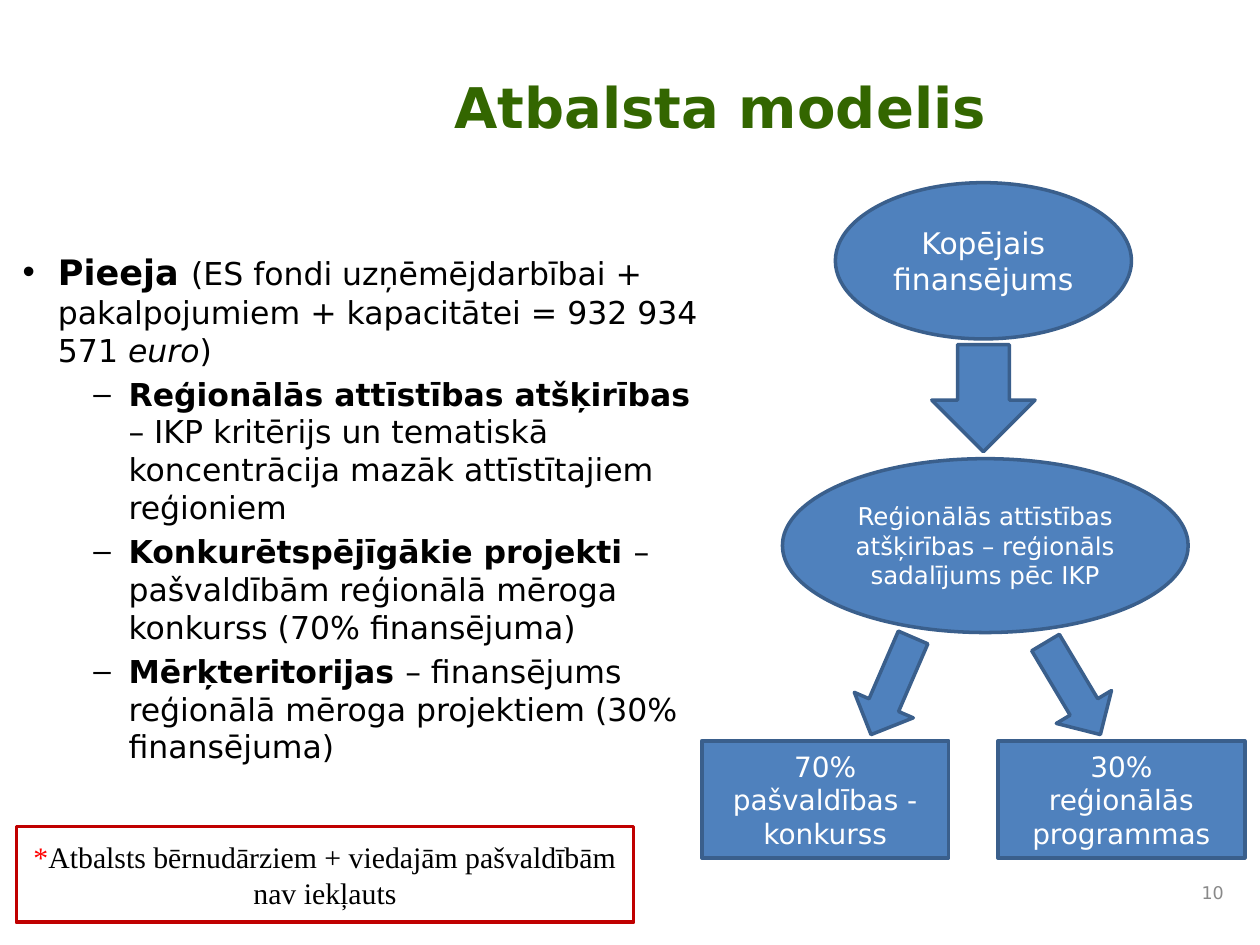
from pptx import Presentation
from pptx.dml.color import RGBColor
from pptx.enum.shapes import MSO_SHAPE
from pptx.enum.text import MSO_ANCHOR, MSO_AUTO_SIZE, PP_ALIGN
from pptx.util import Inches, Pt

BLUE = RGBColor(0x4F, 0x81, 0xBD)
DARK_BLUE = RGBColor(0x3A, 0x5F, 0x8C)
GREEN = RGBColor(0x33, 0x66, 0x00)
DARK_RED = RGBColor(0xC0, 0x00, 0x00)
RED = RGBColor(0xFF, 0x00, 0x00)
GREY = RGBColor(0x89, 0x89, 0x89)
BLACK = RGBColor(0, 0, 0)
WHITE = RGBColor(0xFF, 0xFF, 0xFF)
SANS = "DejaVu Sans"
SERIF = "Times New Roman"

SUBPOINTS = [
    ("Reģionālās attīstības atšķirības ",
     "– IKP kritērijs un tematiskā koncentrācija mazāk attīstītajiem reģioniem"),
    ("Konkurētspējīgākie projekti ",
     "– pašvaldībām reģionālā mēroga konkurss (70% finansējuma)"),
    ("Mērķteritorijas ",
     "– finansējums reģionālā mēroga projektiem (30% finansējuma)"),
]


def place(shape, left, top, width, height):
    shape.left, shape.top = Inches(left), Inches(top)
    shape.width, shape.height = Inches(width), Inches(height)


def style_font(font, size, color, name=SANS):
    font.name = name
    font.size = Pt(size)
    font.color.rgb = color


def add_run(paragraph, text, bold=None, italic=None):
    run = paragraph.add_run()
    run.text = text
    run.font.bold = bold
    run.font.italic = italic
    return run


def set_indent(paragraph, margin, hanging):
    properties = paragraph._p.get_or_add_pPr()
    properties.set("marL", str(Inches(margin)))
    properties.set("indent", str(-Inches(hanging)))


def add_title(slide):
    title = slide.shapes.title
    place(title, 2.09, 0.42, 7.41, 1.13)
    frame = title.text_frame
    frame.auto_size = MSO_AUTO_SIZE.NONE
    frame.vertical_anchor = MSO_ANCHOR.TOP
    frame.text = "Atbalsta modelis "
    heading = frame.paragraphs[0]
    heading.alignment = PP_ALIGN.CENTER
    heading.line_spacing = 1.2
    style_font(heading.font, 32, GREEN)
    heading.font.bold = True


def add_approach(slide):
    body = slide.placeholders[1]
    place(body, 0.08, 1.94, 5.69, 4.41)
    frame = body.text_frame
    frame.auto_size = MSO_AUTO_SIZE.NONE

    approach = frame.paragraphs[0]
    set_indent(approach, 0.28, 0.28)
    style_font(approach.font, 18, BLACK)
    add_run(approach, "Pieeja ", bold=True).font.size = Pt(20)
    add_run(approach, "(ES fondi uzņēmējdarbībai + pakalpojumiem + "
                      "kapacitātei = 932 934 571 ")
    add_run(approach, "euro", italic=True)
    add_run(approach, ")")

    for term, explanation in SUBPOINTS:
        subpoint = frame.add_paragraph()
        subpoint.level = 1
        set_indent(subpoint, 0.84, 0.28)
        style_font(subpoint.font, 18, BLACK)
        add_run(subpoint, term, bold=True)
        add_run(subpoint, explanation)


def add_block(slide, kind, box, fill=BLUE, line=DARK_BLUE):
    block = slide.shapes.add_shape(kind, *map(Inches, box))
    block.shadow.inherit = False
    block.fill.solid()
    block.fill.fore_color.rgb = fill
    block.line.color.rgb = line
    block.line.width = Pt(2)
    return block


def add_node(slide, kind, box, text, size):
    """Add a labelled diagram node; each line of text is a paragraph."""
    frame = add_block(slide, kind, box).text_frame
    frame.word_wrap = True
    frame.vertical_anchor = MSO_ANCHOR.MIDDLE
    frame.text = text
    for paragraph in frame.paragraphs:
        paragraph.alignment = PP_ALIGN.CENTER
        style_font(paragraph.font, size, WHITE)


def add_arrow(slide, box, rotation):
    add_block(slide, MSO_SHAPE.RIGHT_ARROW, box).rotation = rotation


def add_footnote(slide):
    note = add_block(slide, MSO_SHAPE.RECTANGLE, (0.13, 6.56, 4.9, 0.76),
                     WHITE, DARK_RED)
    frame = note.text_frame
    frame.word_wrap = True
    frame.vertical_anchor = MSO_ANCHOR.MIDDLE
    remark = frame.paragraphs[0]
    remark.alignment = PP_ALIGN.CENTER
    style_font(remark.font, 17, BLACK, SERIF)
    add_run(remark, "*").font.color.rgb = RED
    add_run(remark, "Atbalsts bērnudārziem + viedajām pašvaldībām nav iekļauts")


def add_slide_number(slide):
    box = slide.shapes.add_textbox(*map(Inches, (9.33, 6.92, 0.48, 0.33)))
    frame = box.text_frame
    frame.word_wrap = True
    frame.vertical_anchor = MSO_ANCHOR.MIDDLE
    frame.text = "10"
    number = frame.paragraphs[0]
    number.alignment = PP_ALIGN.RIGHT
    style_font(number.font, 10, GREY)


def main():
    prs = Presentation()
    prs.slide_width, prs.slide_height = Inches(10), Inches(7.5)
    slide = prs.slides.add_slide(prs.slide_layouts[1])

    add_title(slide)
    add_approach(slide)

    add_node(slide, MSO_SHAPE.OVAL, (6.63, 1.45, 2.35, 1.24),
             "Kopējais finansējums", 17)
    add_arrow(slide, (7.38, 2.75, 0.85, 0.82), 90)
    add_node(slide, MSO_SHAPE.OVAL, (6.21, 3.64, 3.22, 1.38),
             "Reģionālās attīstības atšķirības – reģionāls sadalījums pēc IKP", 14)
    add_arrow(slide, (8.09, 5.21, 0.85, 0.51), 59.2)
    add_arrow(slide, (6.66, 5.19, 0.84, 0.51), 113.4)
    for left, text in ((5.57, "70%\npašvaldības - konkurss"),
                       (7.92, "30%\nreģionālās programmas")):
        add_node(slide, MSO_SHAPE.RECTANGLE, (left, 5.88, 1.96, 0.93), text, 16)

    add_slide_number(slide)
    add_footnote(slide)
    prs.save("out.pptx")


if __name__ == "__main__":
    main()
